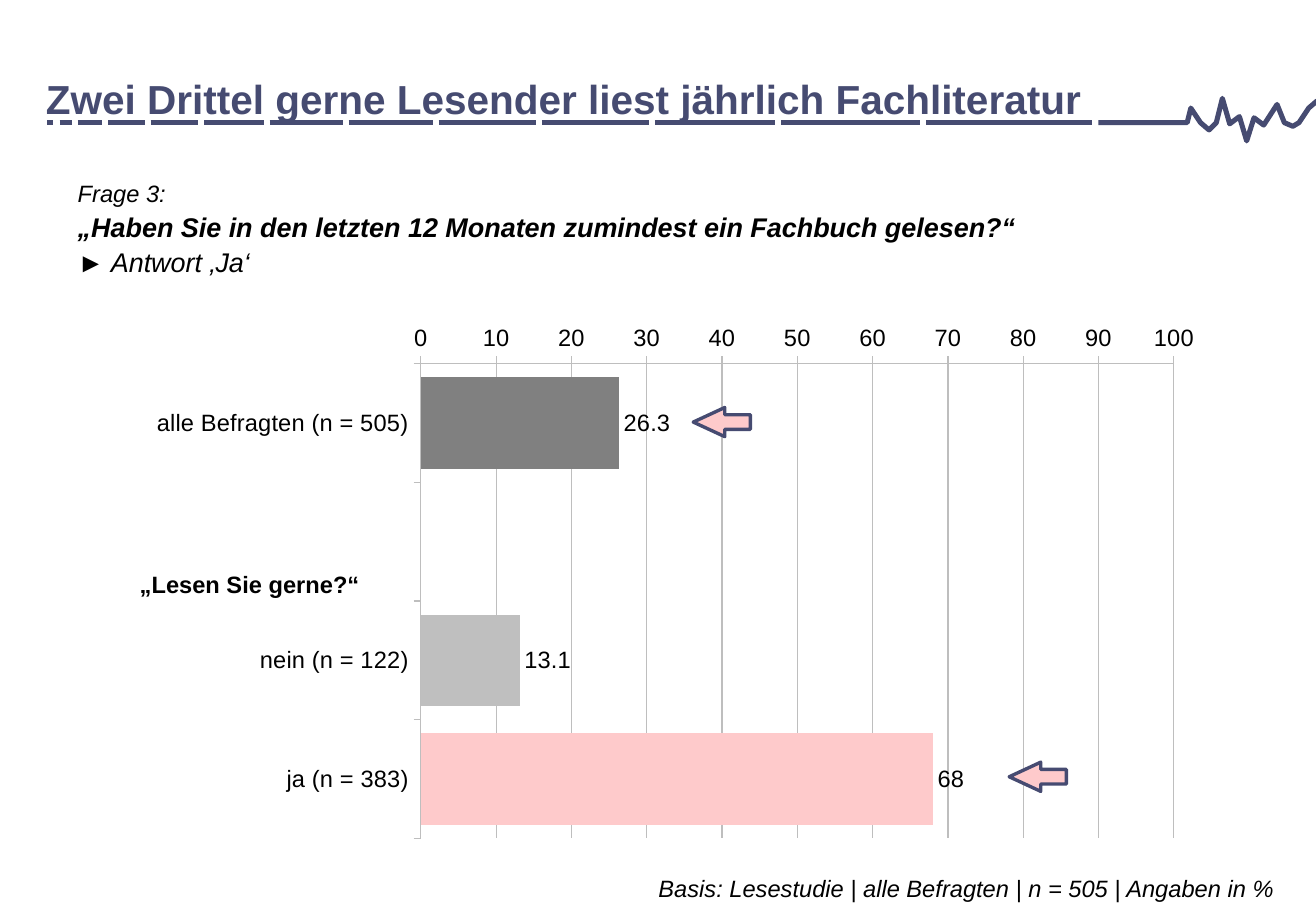
from lxml import etree
from pptx import Presentation, util as u
from pptx.chart import data
from pptx.dml import color
from pptx.enum import chart as charts, shapes, text
from pptx.oxml import ns

COLORS = {
    "navy": "464B71", "pink": "FECACB", "dark": "808080",
    "light": "BFBFBF", "grid": "BEBEBE", "black": "000000", "white": "FFFFFF",
}
FONT = "Arial"


def rgb(name):
    return color.RGBColor.from_string(COLORS[name])


class SlideBuilder:
    """Draws on a grid of 0.1 inch columns and rows."""

    CELL = u.Inches(0.1)

    def __init__(self, presentation):
        self.slide = presentation.slides.add_slide(presentation.slide_layouts[6])

    def grid(self, *cells):
        return [round(cell * self.CELL) for cell in cells]

    def style_line(self, line, name="navy", width=3):
        line.color.rgb = rgb(name)
        line.width = u.Pt(width)

    def style_font(self, font, size=14, name="black", bold=False, italic=False):
        font.name, font.size = FONT, u.Pt(size)
        font.bold, font.italic = bold, italic
        font.color.rgb = rgb(name)

    def text(self, box, lines, margins=(0, 0), spacing=1.1, wrap=True,
             anchor=text.MSO_ANCHOR.MIDDLE, align=text.PP_ALIGN.LEFT, fill=None):
        """Each line is a pair of wording and font style."""
        shape = self.slide.shapes.add_textbox(*self.grid(*box))
        if fill:
            shape.fill.solid()
            shape.fill.fore_color.rgb = rgb(fill)
        frame = shape.text_frame
        frame.word_wrap, frame.vertical_anchor = wrap, anchor
        frame.margin_left = frame.margin_right = u.Inches(margins[0])
        frame.margin_top = frame.margin_bottom = u.Inches(margins[1])
        paragraph = frame.paragraphs[0]
        paragraph.alignment, paragraph.line_spacing = align, spacing
        for index, (wording, style) in enumerate(lines):
            if index:
                paragraph.add_line_break()
            run = paragraph.add_run()
            run.text = wording
            self.style_font(run.font, **style)

    def line(self, left, right, row):
        connector = self.slide.shapes.add_connector(
            shapes.MSO_CONNECTOR.STRAIGHT, *self.grid(left, row, right, row))
        self.style_line(connector.line)
        etree.SubElement(connector._element.spPr, ns.qn("a:effectLst"))

    def outline(self, points):
        start, *rest = [self.grid(*point) for point in points]
        builder = self.slide.shapes.build_freeform(*start)
        builder.add_line_segments(rest, close=False)
        shape = builder.convert_to_shape()
        shape.shadow.inherit = False
        shape.fill.background()
        self.style_line(shape.line)

    def arrow(self, left, top):
        shape = self.slide.shapes.add_shape(
            shapes.MSO_SHAPE.DOWN_ARROW, *self.grid(left, top, 2.4, 4.7))
        shape.adjustments[0], shape.adjustments[1] = 0.5, 1.08
        shape.rotation = 90
        shape.shadow.inherit = False
        shape.fill.solid()
        shape.fill.fore_color.rgb = rgb("pink")
        self.style_line(shape.line, width=2)

    def bar_chart(self, box, rows, layout):
        """Each row holds a category, its value and its colour."""
        chart_data = data.CategoryChartData()
        chart_data.categories = [row[0] for row in rows]
        chart_data.add_series("Series 1", [row[1] for row in rows])
        chart = self.slide.shapes.add_chart(
            charts.XL_CHART_TYPE.BAR_CLUSTERED, *self.grid(*box), chart_data).chart
        chart.has_legend = chart.has_title = False
        self.style_font(chart.font)

        # Axes
        for axis in (chart.category_axis, chart.value_axis):
            axis.major_tick_mark = charts.XL_TICK_MARK.OUTSIDE
            axis.minor_tick_mark = charts.XL_TICK_MARK.NONE
            self.style_line(axis.format.line, "grid", 0.75)
            self.style_font(axis.tick_labels.font)
        chart.category_axis.reverse_order = True
        scale = chart.value_axis
        scale.minimum_scale, scale.maximum_scale, scale.major_unit = 0, 100, 10
        scale.has_major_gridlines = True
        self.style_line(scale.major_gridlines.format.line, "grid", 0.75)

        # Bars and values
        plot = chart.plots[0]
        plot.gap_width, plot.vary_by_categories = 30, False
        series = plot.series[0]
        series.invert_if_negative = False
        series.format.fill.solid()
        series.format.fill.fore_color.rgb = rgb("dark")
        for index, (_, value, name) in enumerate(rows):
            if value is not None:
                fill = series.points[index].format.fill
                fill.solid()
                fill.fore_color.rgb = rgb(name)
        labels = series.data_labels
        labels.show_value = True
        labels.position = charts.XL_LABEL_POSITION.OUTSIDE_END
        self.style_font(labels.font)

        # Fixed inner plot area
        area = chart._chartSpace.chart.plotArea
        for old in area.findall(ns.qn("c:layout")):
            area.remove(old)
        holder = etree.Element(ns.qn("c:layout"))
        area.insert(0, holder)
        manual = etree.SubElement(holder, ns.qn("c:manualLayout"))
        settings = [("layoutTarget", "inner"), ("xMode", "edge"), ("yMode", "edge")]
        for tag, value in settings + list(zip("xywh", layout)):
            etree.SubElement(manual, ns.qn(f"c:{tag}")).set("val", str(value))


def main():
    presentation = Presentation()
    presentation.slide_width, presentation.slide_height = u.Inches(10.83), u.Inches(7.5)
    builder = SlideBuilder(presentation)

    # Chart
    builder.bar_chart(
        (8.4, 21.8, 99, 53.2),
        [("alle Befragten (n = 505)", 26.3, "dark"), ("", None, None),
         ("nein (n = 122)", 13.1, "light"), ("ja (n = 383)", 68, "pink")],
        (0.265, 0.153, 0.626, 0.735))

    # Title
    builder.text(
        (2.8, 5.2, 88, 5.1),
        [("Zwei Drittel gerne Lesender liest jährlich Fachliteratur",
          dict(size=24, name="navy", bold=True))],
        margins=(0.1, 0.05), wrap=False, anchor=text.MSO_ANCHOR.TOP)

    # Growing dashes that end in a pulse
    baseline, gap, left = 10.1, 0.5, 3.9
    for length in (0.5, 1, 2, 3, 3.9, 4.9, 6, 6.9, 8, 8.8, 9.9, 11.4, 13.7):
        builder.line(left, left + length, baseline)
        left += length + gap
    builder.outline([
        (108.4, 8.3), (107.7, 8.9), (106.9, 10.1), (106.4, 10.4), (105.7, 10.1),
        (105.1, 8.6), (104, 10.3), (103.2, 9.7), (102.6, 11.6), (102, 9.6),
        (101.2, 10.2), (100.6, 8.1), (100.1, 10.1), (99.5, 10.7), (98.8, 10.1),
        (98, 8.9), (97.7, baseline), (left, baseline)])

    # Question
    builder.text((6.4, 14, 79, 9.4), [
        ("Frage 3:", dict(italic=True)),
        ("„Haben Sie in den letzten 12 Monaten zumindest ein Fachbuch gelesen?“",
         dict(size=16, bold=True, italic=True)),
        ("► Antwort ‚Ja‘", dict(size=16, italic=True))])
    builder.text((11.5, 46.7, 31.1, 2.7),
                 [("„Lesen Sie gerne?“", dict(bold=True))], spacing=1)

    # Arrows at the compared bars
    for left, top in ((58.2, 32.4), (84.2, 61.6)):
        builder.arrow(left, top)

    # Basis
    builder.text(
        (43.9, 71.2, 61.6, 3.6),
        [("Basis: Lesestudie | alle Befragten | n = 505 | Angaben in %",
          dict(italic=True))],
        margins=(0.06, 0.06), align=text.PP_ALIGN.RIGHT, fill="white")

    presentation.save("out.pptx")


if __name__ == "__main__":
    main()
